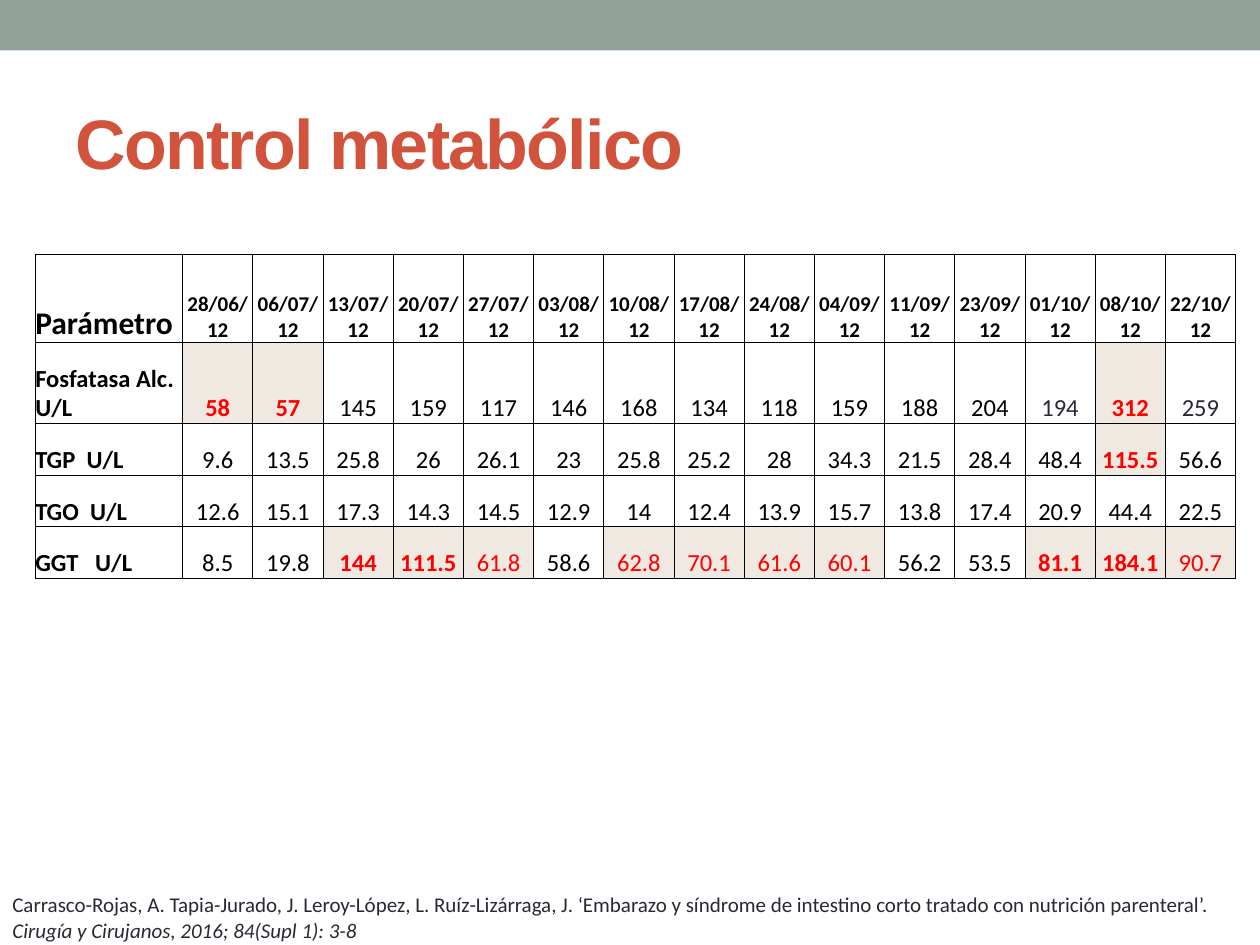
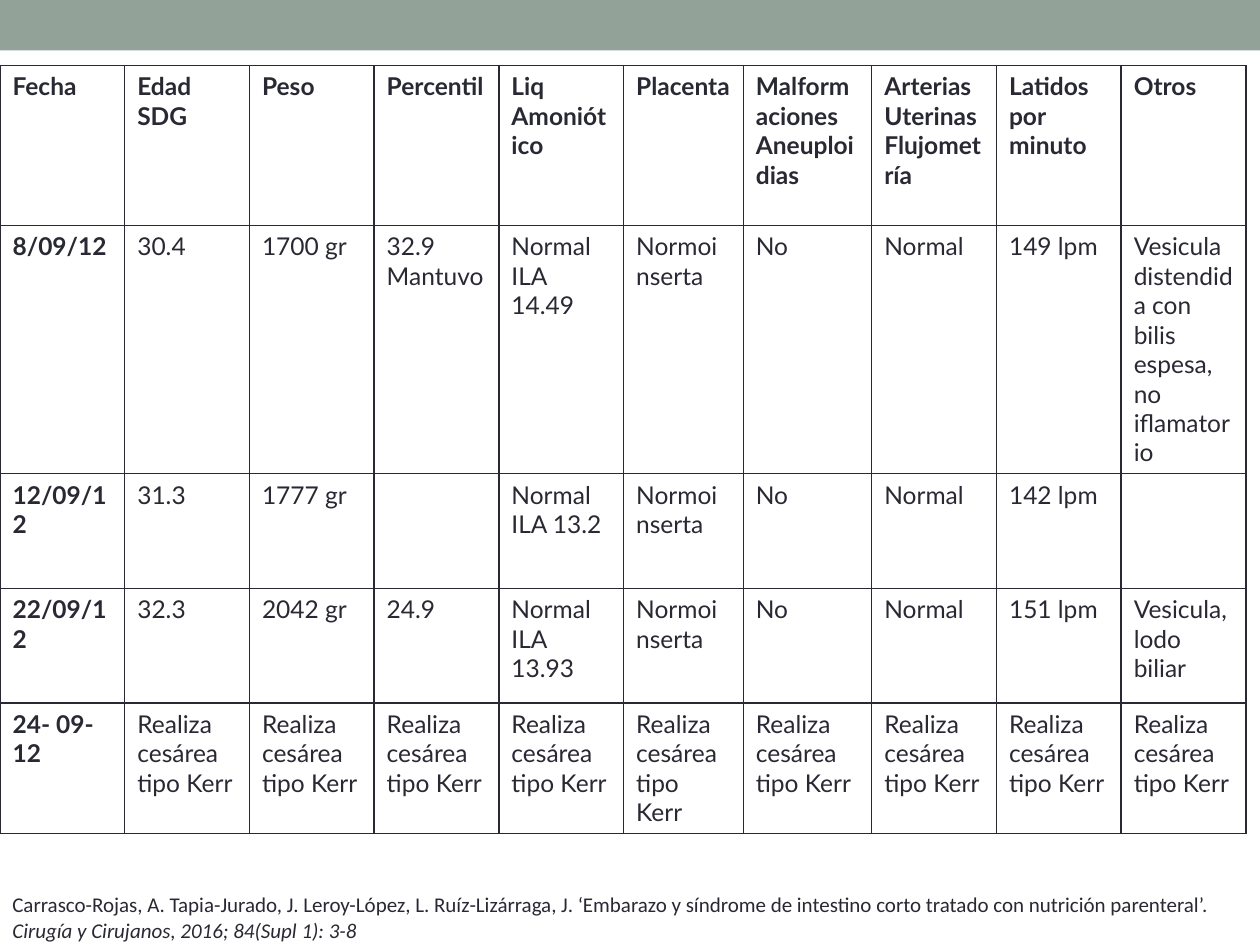
import pptx
import pptx.util
import pptx.dml.color
import pptx.enum.shapes
import pptx.enum.text
import pptx.oxml
import pptx.oxml.ns

Inches = pptx.util.Inches
Pt = pptx.util.Pt
ALIGN = pptx.enum.text.PP_ALIGN
ANCHOR = pptx.enum.text.MSO_ANCHOR

COLORS = {
    "band": "93A299",
    "title": "D2533C",
    "text": "292934",
    "black": "000000",
    "alert": "FF0000",
    "highlight": "EFE9E1",
    "white": "FFFFFF",
}

CITATION = (
    "Carrasco-Rojas, A. Tapia-Jurado, J. Leroy-López, L. Ruíz-Lizárraga, J. "
    "‘Embarazo y síndrome de intestino corto tratado con nutrición parenteral’. "
)
JOURNAL = "Cirugía y Cirujanos, 2016; 84(Supl 1): 3-8"

MARKS = {
    "*": {"color": "alert", "bold": True, "fill": "highlight"},
    "+": {"color": "alert", "fill": "highlight"},
    "~": {"color": "text", "fill": "white"},
}

DATES = (
    "28/06 06/07 13/07 20/07 27/07 03/08 10/08 17/08 "
    "24/08 04/09 11/09 23/09 01/10 08/10 22/10"
).split()

LAB_RESULTS = {
    "Fosfatasa Alc.  U/L": "*58 *57 145 159 117 146 168 134 118 159 188 204 ~194 *312 ~259",
    "TGP  U/L": "9.6 13.5 25.8 26 26.1 23 25.8 25.2 28 34.3 21.5 28.4 48.4 *115.5 56.6",
    "TGO  U/L": "12.6 15.1 17.3 14.3 14.5 12.9 14 12.4 13.9 15.7 13.8 17.4 20.9 44.4 22.5",
    "GGT   U/L": "8.5 19.8 *144 *111.5 +61.8 58.6 +62.8 +70.1 +61.6 +60.1 56.2 53.5 *81.1 *184.1 +90.7",
}

ULTRASOUND_ROWS = [
    ["Fecha", "Edad SDG", "Peso", "Percentil", "Liq Amoniótico", "Placenta",
     "Malformaciones\nAneuploidias", "Arterias Uterinas\nFlujometría",
     "Latidos por minuto", "Otros"],
    ["8/09/12", "30.4", "1700 gr", "32.9 Mantuvo", "Normal\nILA 14.49", "Normoinserta",
     "No", "Normal", "149 lpm", "Vesicula distendida con bilis espesa, no iflamatorio"],
    ["12/09/12", "31.3", "1777 gr", "", "Normal\nILA 13.2", "Normoinserta",
     "No", "Normal", "142 lpm", ""],
    ["22/09/12", "32.3", "2042 gr", "24.9", "Normal\nILA 13.93", "Normoinserta",
     "No", "Normal", "151 lpm", "Vesicula, lodo biliar"],
    ["24- 09-12"] + ["Realiza cesárea tipo Kerr"] * 9,
]


class Deck:
    def __init__(self):
        self.presentation = pptx.Presentation()
        self.presentation.slide_width = Inches(10)
        self.presentation.slide_height = Inches(7.5)
        self.slide = None

    def rgb(self, name):
        return pptx.dml.color.RGBColor.from_string(COLORS[name])

    def add_slide(self):
        self.slide = self.presentation.slides.add_slide(self.presentation.slide_layouts[6])
        self.add_band()
        self.add_citation()

    def add_band(self):
        band = self.slide.shapes.add_shape(
            pptx.enum.shapes.MSO_SHAPE.RECTANGLE, 0, 0, Inches(10), Inches(0.4))
        band.shadow.inherit = False
        band.fill.solid()
        band.fill.fore_color.rgb = self.rgb("band")
        band.line.fill.background()

    def add_text(self, left, top, width, height, **frame_format):
        box = self.slide.shapes.add_textbox(
            Inches(left), Inches(top), Inches(width), Inches(height))
        for name, value in {"word_wrap": True, **frame_format}.items():
            setattr(box.text_frame, name, value)
        return box.text_frame.paragraphs[0]

    def add_run(self, paragraph, text, color="text", **font_format):
        run = paragraph.add_run()
        run.text = text
        for name, value in font_format.items():
            setattr(run.font, name, value)
        run.font.color.rgb = self.rgb(color)
        return run

    def add_title(self, text):
        paragraph = self.add_text(0.5, 0.58, 9, 1.08, vertical_anchor=ANCHOR.MIDDLE)
        run = self.add_run(paragraph, text, "title", name="Arial", size=Pt(40), bold=True)
        run.font._element.set("spc", "-100")

    def add_citation(self):
        paragraph = self.add_text(
            0, 7.03, 10, 0.5, auto_size=pptx.enum.text.MSO_AUTO_SIZE.SHAPE_TO_FIT_TEXT)
        for text, italic in ((CITATION, False), (JOURNAL, True)):
            self.add_run(paragraph, text, name="Calibri", size=Pt(12), italic=italic)

    def add_table(self, left, top, widths, heights):
        table = self.slide.shapes.add_table(
            len(heights), len(widths), Inches(left), Inches(top),
            Inches(sum(widths)), Inches(sum(heights))).table
        table.first_row = False
        table.horz_banding = False
        for column, width in zip(table.columns, widths):
            column.width = Inches(width)
        for row, height in zip(table.rows, heights):
            row.height = Inches(height)
        return table

    def add_borders(self, cell, color, width):
        properties = cell._tc.get_or_add_tcPr()
        for side in ("lnL", "lnR", "lnT", "lnB"):
            properties.append(pptx.oxml.parse_xml(
                f'<a:{side} {pptx.oxml.ns.nsdecls("a")} w="{Pt(width)}">'
                f'<a:solidFill><a:srgbClr val="{COLORS[color]}"/></a:solidFill></a:{side}>'))

    def fill_cell(self, cell, text, border, fill=None, align=ALIGN.LEFT,
                  cell_format=None, **font_format):
        self.add_borders(cell, *border)
        if fill:
            cell.fill.solid()
            cell.fill.fore_color.rgb = self.rgb(fill)
        else:
            cell.fill.background()
        for name, value in (cell_format or {}).items():
            setattr(cell, name, value)
        for index, line in enumerate(text.split("\n") if text else []):
            frame = cell.text_frame
            paragraph = frame.add_paragraph() if index else frame.paragraphs[0]
            paragraph.alignment = align
            self.add_run(paragraph, line, **font_format)


def build_metabolic_control(deck):
    deck.add_slide()
    deck.add_title("Control metabólico")
    date_width = (9.53 - 1.17) / len(DATES)
    table = deck.add_table(
        0.28, 2.02, [1.17] + [date_width] * len(DATES), [0.7, 0.64] + [0.41] * 3)
    rows = [["Parámetro"] + [f"{date}/12" for date in DATES]]
    rows += [[label] + values.split() for label, values in LAB_RESULTS.items()]
    margins = ("margin_left", "margin_top", "margin_right", "margin_bottom")
    cell_format = {"vertical_anchor": ANCHOR.BOTTOM, **dict.fromkeys(margins, 0)}
    for row, values in enumerate(rows):
        for column, value in enumerate(values):
            size = 14 if row else 12 if column else 18
            style = {"color": "black", "bold": row == 0 or column == 0,
                     **MARKS.get(value[0], {})}
            deck.fill_cell(
                table.cell(row, column), value.lstrip("*+~"), ("black", 0.5),
                align=ALIGN.CENTER if column else ALIGN.LEFT,
                cell_format=cell_format, name="Calibri", size=Pt(size), **style)


def build_ultrasound_follow_up(deck):
    deck.add_slide()
    table = deck.add_table(
        0, 0.52, [0.99] * 5 + [0.95, 1.02] + [0.99] * 3, [1.27, 1.97, 0.91, 0.91, 1.03])
    for row, values in enumerate(ULTRASOUND_ROWS):
        for column, value in enumerate(values):
            deck.fill_cell(
                table.cell(row, column), value, ("text", 1),
                name="Lato", size=Pt(14), bold=row == 0 or column == 0)


def main():
    deck = Deck()
    build_metabolic_control(deck)
    build_ultrasound_follow_up(deck)
    deck.presentation.save("out.pptx")


if __name__ == "__main__":
    main()
